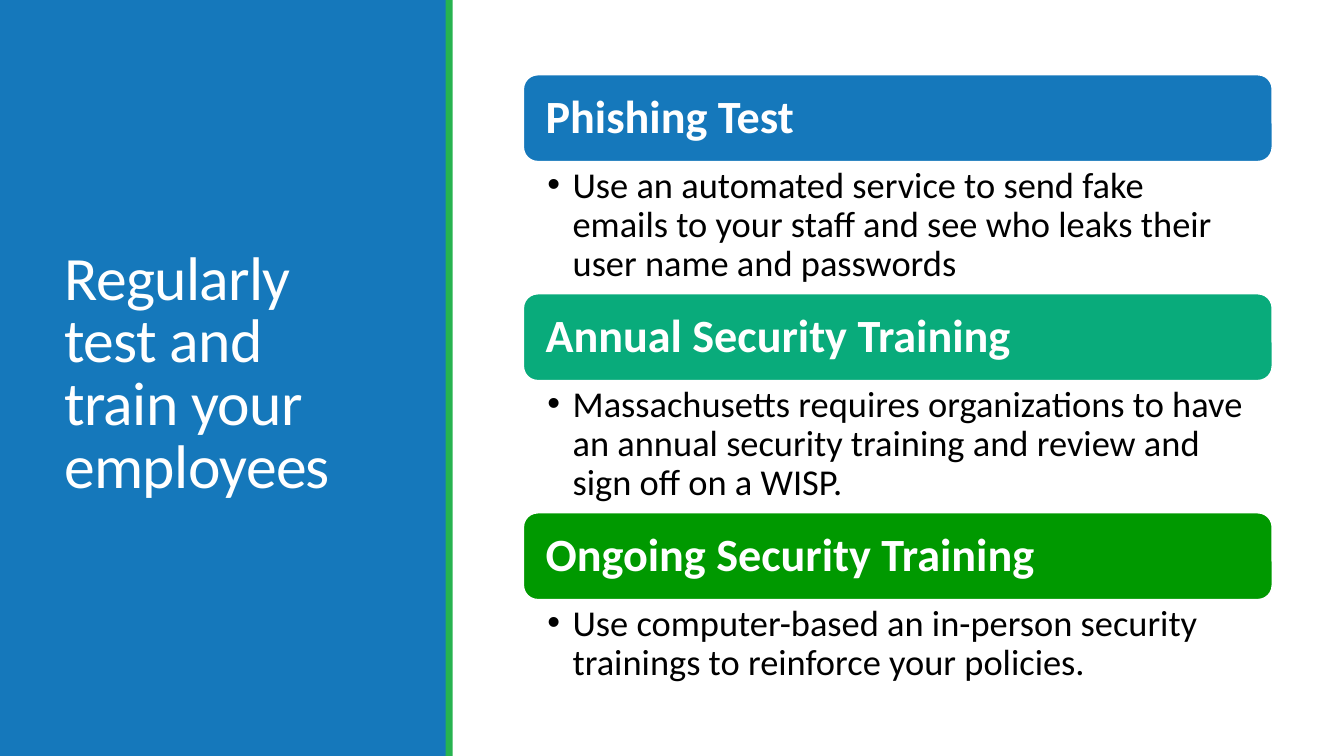
from pptx import Presentation
from pptx.dml.color import RGBColor
from pptx.enum.shapes import MSO_SHAPE
from pptx.enum.text import MSO_ANCHOR, MSO_AUTO_SIZE, PP_ALIGN
from pptx.oxml.ns import qn
from pptx.util import Inches, Pt
from lxml.etree import SubElement


def paint(code):
    return RGBColor.from_string(code)


class Deck:
    font = "Calibri"
    blue, teal, green, lime = "1578BB", "09AB7B", "009900", "27B350"
    white, black = "FFFFFF", "000000"

    def __init__(self):
        self.show = Presentation()
        self.show.slide_width = Inches(13.33)
        self.show.slide_height = Inches(7.5)
        self.slide = self.show.slides.add_slide(self.show.slide_layouts[5])

    def place(self, left, top, width, height):
        wide, high = self.show.slide_width, self.show.slide_height
        return [int(share * size / 100) for share, size in
                zip((left, top, width, height), (wide, high, wide, high))]

    def block(self, box, fill, kind=MSO_SHAPE.RECTANGLE, line=None):
        shape = self.slide.shapes.add_shape(kind, *self.place(*box))
        shape.shadow.inherit = False
        shape.fill.solid()
        shape.fill.fore_color.rgb = paint(fill)
        if line:
            shape.line.color.rgb = paint(line)
            shape.line.width = Pt(1.25)
        else:
            shape.line.fill.background()
        return shape

    def label(self, shape, text, size, color, inset, anchor, space=0.9,
              bold=False, bullet=False, track=0):
        frame = shape.text_frame
        frame.word_wrap = True
        frame.auto_size = MSO_AUTO_SIZE.NONE
        frame.vertical_anchor = anchor
        frame.margin_left, frame.margin_right = map(Inches, inset)
        frame.margin_top = frame.margin_bottom = Inches(0.05)
        para = frame.paragraphs[0]
        para.alignment = PP_ALIGN.LEFT
        para.line_spacing = space
        if bullet:
            props = para._p.get_or_add_pPr()
            props.set("marL", str(Inches(0.25)))
            props.set("indent", str(-Inches(0.25)))
            SubElement(props, qn("a:buFont"), typeface="Arial")
            SubElement(props, qn("a:buChar"), char="•")
        run = para.add_run()
        run.text = text
        run.font.name = self.font
        run.font.size = Pt(size)
        run.font.bold = bold
        run.font.color.rgb = paint(color)
        if track:
            run._r.get_or_add_rPr().set("spc", str(int(track * 100)))

    def title(self, box, text):
        shape = self.slide.shapes.title
        shape.left, shape.top, shape.width, shape.height = self.place(*box)
        shape.element.getparent().append(shape.element)
        self.label(shape, text, 44, self.white, (0.1, 0.1),
                   MSO_ANCHOR.MIDDLE, space=0.85, track=-0.5)

    def head(self, box, text, fill):
        shape = self.block(box, fill, MSO_SHAPE.ROUNDED_RECTANGLE, self.white)
        self.label(shape, text, 33, self.white, (0.18, 0.18),
                   MSO_ANCHOR.MIDDLE, bold=True)

    def body(self, box, text):
        shape = self.slide.shapes.add_textbox(*self.place(*box))
        self.label(shape, text, 26, self.black, (0.24, 0.26),
                   MSO_ANCHOR.TOP, bullet=True)


def main():
    deck = Deck()
    deck.block((0, 0, 33.23, 100), deck.blue)
    deck.title((4.05, 7.6, 25.28, 84.13),
               "Regularly test and train your employees")
    deck.block((33.16, 0, 0.53, 100), deck.lime)

    topics = [
        ("Phishing Test", deck.blue, 17.4,
         "Use an automated service to send fake emails to your staff "
         "and see who leaks their user name and passwords"),
        ("Annual Security Training", deck.teal, 17.4,
         "Massachusetts requires organizations to have an annual security "
         "training and review and sign off on a WISP."),
        ("Ongoing Security Training", deck.green, 12,
         "Use computer-based an in-person security trainings "
         "to reinforce your policies."),
    ]
    left, width, top, bar, step = 38.93, 55.74, 9.87, 11.53, 28.97
    for row, (name, fill, depth, text) in enumerate(topics):
        start = top + row * step
        deck.head((left, start, width, bar), name, fill)
        deck.body((left, start + bar, width, depth), text)
    deck.show.save("out.pptx")


if __name__ == "__main__":
    main()
